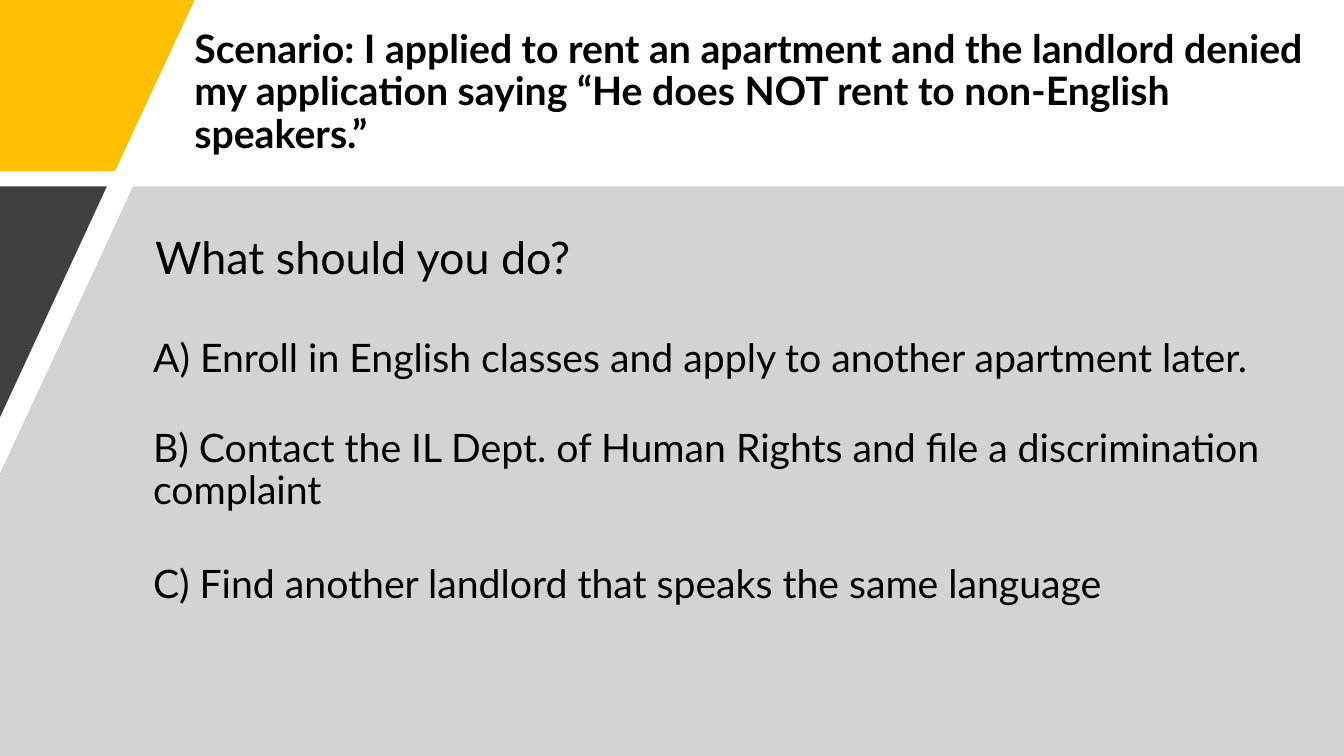
from lxml.etree import SubElement
from pptx import Presentation
from pptx.dml.color import RGBColor
from pptx.enum.text import MSO_ANCHOR
from pptx.oxml.ns import qn
from pptx.util import Inches, Pt

BLACK = RGBColor(0x00, 0x00, 0x00)
GRAY = RGBColor(0xA6, 0xA6, 0xA6)
DARK = RGBColor(0x40, 0x40, 0x40)
GOLD = RGBColor(0xFF, 0xC0, 0x00)
FONT = "Lato"
WIDE, HIGH = 13.33, 7.5
BAND = 1.85

TITLE = ("Scenario: I applied to rent an apartment and the landlord denied my "
         "application saying “He does NOT rent to non-English speakers.”")
ASK = "What should you do?"
ANSWERS = [
    ("A) Enroll in English classes and apply to another apartment later.", 0),
    ("B) Contact the IL Dept. of Human Rights and file a discrimination complaint", 34),
    ("C) Find another landlord that speaks the same language", 37),
]
PANELS = [
    ([(1.32, BAND), (WIDE, BAND), (WIDE, HIGH), (0, HIGH), (0, 4.7)], GRAY, 49),
    ([(0, BAND), (1.06, BAND), (0, 4.14)], DARK, 100),
    ([(0, 0), (1.93, 0), (1.14, 1.7), (0, 1.7)], GOLD, 100),
]


def add_panel(slide, points, color, alpha):
    spots = [(Inches(x), Inches(y)) for x, y in points]
    pen = slide.shapes.build_freeform(*spots[0], scale=1.0)
    pen.add_line_segments(spots[1:], close=True)
    panel = pen.convert_to_shape()
    panel.shadow.inherit = False
    panel.line.fill.background()
    panel.fill.solid()
    panel.fill.fore_color.rgb = color
    if alpha < 100:
        tint = panel.fill._xPr.find(".//" + qn("a:srgbClr"))
        SubElement(tint, qn("a:alpha")).set("val", str(alpha * 1000))


def add_text(slide, lines, box, size=28, bold=False, inset=0.1, anchor=MSO_ANCHOR.TOP):
    frame = slide.shapes.add_textbox(*[Inches(n) for n in box]).text_frame
    frame.word_wrap = True
    frame.vertical_anchor = anchor
    frame.margin_left = frame.margin_right = Inches(0.1)
    frame.margin_top = frame.margin_bottom = Inches(inset)
    for i, (text, gap) in enumerate(lines):
        para = frame.add_paragraph() if i else frame.paragraphs[0]
        para.line_spacing = 0.9
        if gap:
            para.space_before = Pt(gap)
        run = para.add_run()
        run.text = text
        run.font.name = FONT
        run.font.size = Pt(size)
        run.font.bold = bold
        run.font.color.rgb = BLACK


def main():
    deck = Presentation()
    deck.slide_width, deck.slide_height = Inches(WIDE), Inches(HIGH)
    slide = deck.slides.add_slide(deck.slide_layouts[6])
    for points, color, alpha in PANELS:
        add_panel(slide, points, color, alpha)
    add_text(slide, [(TITLE, 0)], (1.83, 0.2, 11.5, 1.45), bold=True,
             inset=0.05, anchor=MSO_ANCHOR.MIDDLE)
    add_text(slide, [(ASK, 0)], (1.44, 2.24, 11.5, 0.69), size=32)
    add_text(slide, ANSWERS, (1.42, 3.26, 11.54, 3.65))
    deck.save("out.pptx")


if __name__ == "__main__":
    main()
